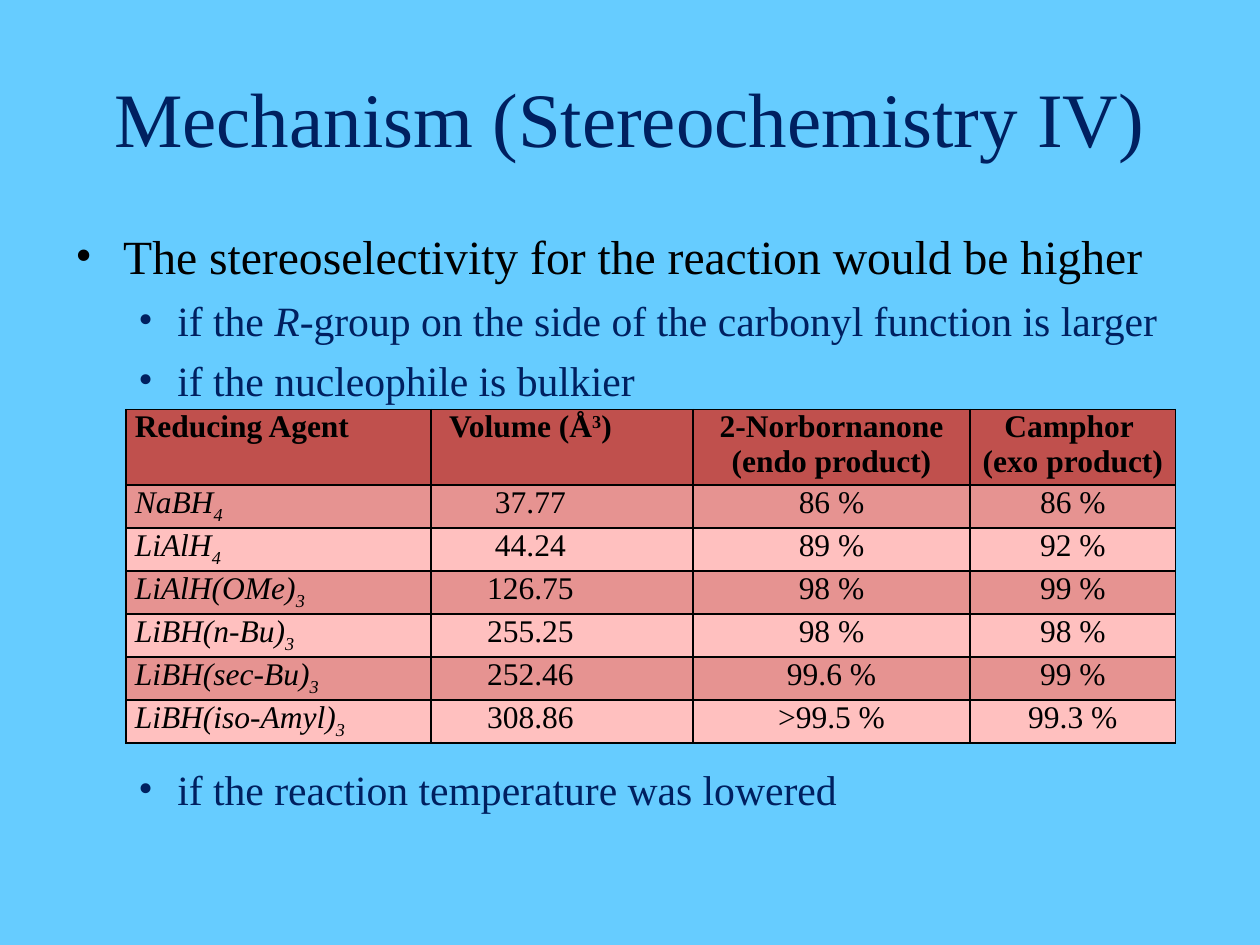
import pptx
import pptx.dml.color
import pptx.enum.text
import pptx.oxml
import pptx.oxml.ns
import pptx.util
from pptx.util import Inches

ALIGN = pptx.enum.text.PP_ALIGN
FONT = "Times New Roman"
NAVY, BLACK, SKY = "002060", "000000", "66CCFF"
HEADER_FILL, BAND_FILLS = "C0504D", ("E69391", "FFC0BF")

COLUMN_WIDTHS = (2.42, 2.08, 2.2, 1.63)
HEADER_HEIGHT, ROW_HEIGHT = 0.55, 0.31
VOLUME_COLUMN, VOLUME_RIGHT_INSET = 1, 0.57

HEADERS = (
    [("Reducing Agent", {})],
    [("Volume (Å", {}), ("3", {"baseline": 30}), (")", {})],
    [("2-Norbornanone (endo product)", {})],
    [("Camphor \v(exo product)", {})],
)
REDUCTIONS = (
    ("NaBH", "4", "37.77", "86 %", "86 %"),
    ("LiAlH", "4", "44.24", "89 %", "92 %"),
    ("LiAlH(OMe)", "3", "126.75", "98 %", "99 %"),
    ("LiBH(n-Bu)", "3", "255.25", "98 %", "98 %"),
    ("LiBH(sec-Bu)", "3", "252.46", "99.6 %", "99 %"),
    ("LiBH(iso-Amyl)", "3", "308.86", ">99.5 %", "99.3 %"),
)


def rgb(value):
    return pptx.dml.color.RGBColor.from_string(value)


def set_values(target, values):
    for name, value in values.items():
        setattr(target, name, value)


def add_run(paragraph, text, size, color, baseline=0, **style):
    for index, line in enumerate(text.split("\v")):
        if index:
            paragraph.add_line_break()
        run = paragraph.add_run()
        run.text = line
        set_values(run.font, {"name": FONT, "size": pptx.util.Pt(size), **style})
        run.font.color.rgb = rgb(color)
        if baseline:
            run._r.get_or_add_rPr().set("baseline", str(baseline * 1000))


def add_text_frame(slide, left, top, width, height, anchor):
    box = slide.shapes.add_textbox(Inches(left), Inches(top), Inches(width), Inches(height))
    set_values(box.text_frame, {"word_wrap": True, "vertical_anchor": anchor})
    return box.text_frame


def add_title(slide):
    frame = add_text_frame(slide, 0.5, 0.3, 9, 1.25, pptx.enum.text.MSO_ANCHOR.MIDDLE)
    title = frame.paragraphs[0]
    title.alignment = ALIGN.CENTER
    add_run(title, "Mechanism (Stereochemistry IV)", 44, NAVY)


def format_bullet(paragraph, level, margin, hanging, space_before):
    set_values(paragraph, {"level": level, "space_before": pptx.util.Pt(space_before)})
    properties = paragraph._p.get_or_add_pPr()
    properties.set("marL", str(Inches(margin)))
    properties.set("indent", str(-Inches(hanging)))
    namespace = pptx.oxml.ns.nsdecls("a")
    properties.append(pptx.oxml.parse_xml(f'<a:buFont {namespace} typeface="{FONT}"/>'))
    properties.append(pptx.oxml.parse_xml(f'<a:buChar {namespace} char="•"/>'))


def add_body(slide):
    frame = add_text_frame(slide, 0.5, 1.75, 9, 4.95, pptx.enum.text.MSO_ANCHOR.TOP)
    claim = frame.paragraphs[0]
    format_bullet(claim, 0, 0.38, 0.38, 3)
    add_run(claim, "The stereoselectivity for the reaction would be higher", 27.2, BLACK)
    conditions = (
        (6, [("if the ", {}), ("R", {"italic": True}),
             ("-group on the side of the carbonyl function is larger", {})]),
        (6, [("if the nucleophile is bulkier", {})]),
        (205, [("if the reaction temperature was lowered", {})]),
    )
    for space_before, runs in conditions:
        condition = frame.add_paragraph()
        format_bullet(condition, 1, 0.81, 0.31, space_before)
        for text, style in runs:
            add_run(condition, text, 23.8, NAVY, **style)


def add_borders(cell):
    properties = cell._tc.get_or_add_tcPr()
    for side in ("lnL", "lnR", "lnT", "lnB"):
        properties.append(pptx.oxml.parse_xml(
            f'<a:{side} {pptx.oxml.ns.nsdecls("a")} w="{pptx.util.Pt(1)}">'
            f'<a:solidFill><a:srgbClr val="{BLACK}"/></a:solidFill></a:{side}>'))


def fill_cell(cell, column, runs, fill, bold):
    right = VOLUME_RIGHT_INSET if column == VOLUME_COLUMN else 0.07
    set_values(cell, {"margin_left": Inches(0.07), "margin_right": Inches(right),
                      "margin_top": 0, "margin_bottom": 0})
    add_borders(cell)
    cell.fill.solid()
    cell.fill.fore_color.rgb = rgb(fill)
    paragraph = cell.text_frame.paragraphs[0]
    paragraph.alignment = ALIGN.CENTER if column else ALIGN.JUSTIFY
    for text, style in runs:
        add_run(paragraph, text, 18, BLACK, bold=bold, **style)


def add_reduction_table(slide):
    rows = [HEADERS]
    for agent, count, *values in REDUCTIONS:
        formula = [(agent, {"italic": True}), (count, {"italic": True, "baseline": -25})]
        rows.append([formula] + [[(value, {})] for value in values])
    height = HEADER_HEIGHT + ROW_HEIGHT * len(REDUCTIONS)
    table = slide.shapes.add_table(
        len(rows), len(COLUMN_WIDTHS), Inches(1), Inches(3.25),
        Inches(sum(COLUMN_WIDTHS)), Inches(height)).table
    set_values(table, {"first_row": False, "horz_banding": False})
    for column, width in zip(table.columns, COLUMN_WIDTHS):
        column.width = Inches(width)
    for index, cells in enumerate(rows):
        is_header = index == 0
        table.rows[index].height = Inches(HEADER_HEIGHT if is_header else ROW_HEIGHT)
        fill = HEADER_FILL if is_header else BAND_FILLS[(index - 1) % 2]
        for column, runs in enumerate(cells):
            fill_cell(table.cell(index, column), column, runs, fill, is_header)


def main():
    deck = pptx.Presentation()
    set_values(deck, {"slide_width": Inches(10), "slide_height": Inches(7.5)})
    slide = deck.slides.add_slide(deck.slide_layouts[6])
    slide.background.fill.solid()
    slide.background.fill.fore_color.rgb = rgb(SKY)
    add_title(slide)
    add_body(slide)
    add_reduction_table(slide)
    deck.save("out.pptx")


if __name__ == "__main__":
    main()
